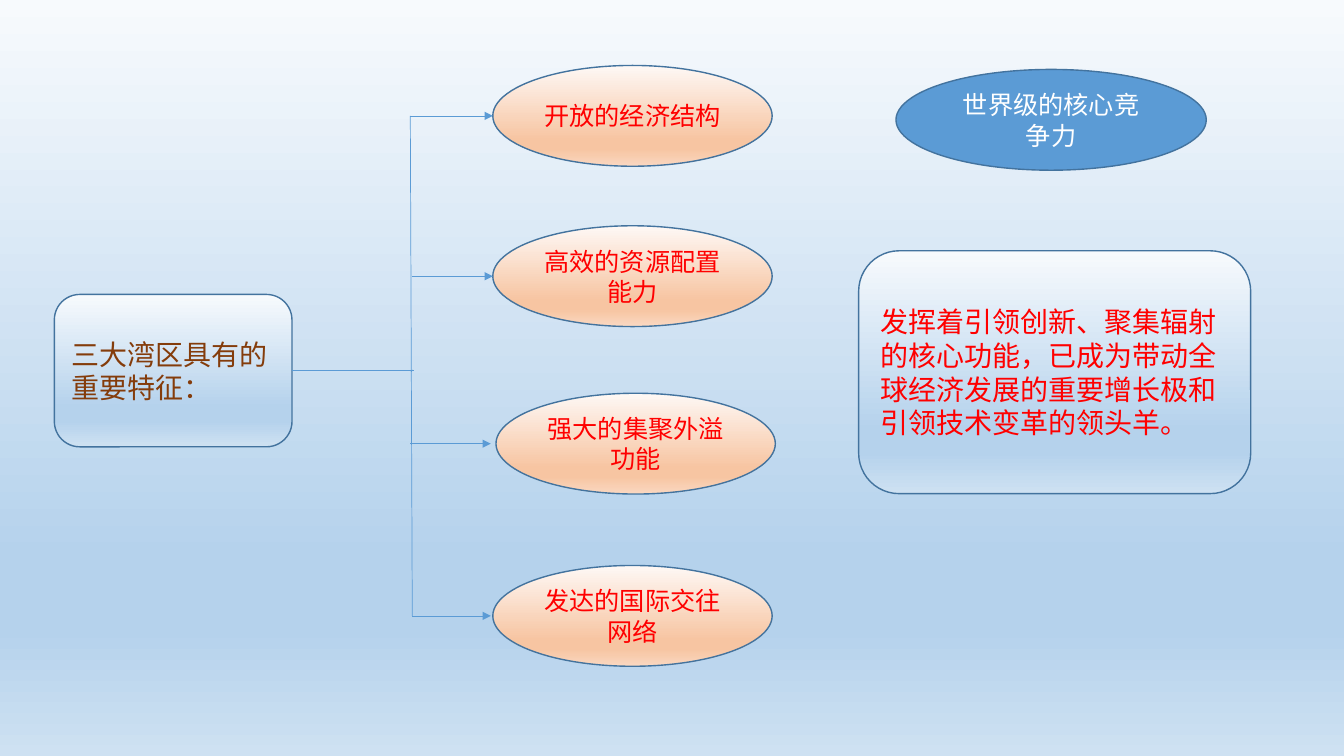
import pptx
import pptx.util
import pptx.dml.color
import pptx.enum.shapes
import pptx.enum.text
import pptx.oxml
import pptx.oxml.ns
from pptx.util import Cm

MSO = pptx.enum.shapes.MSO_SHAPE
ALIGN = pptx.enum.text.PP_ALIGN
qn = pptx.oxml.ns.qn

BLUE_STOPS = [(0, "F7FAFD"), (74, "B5D2EC"), (83, "B5D2EC"), (100, "CEE1F2")]
ORANGE_STOPS = [(0, "FEF8F5"), (74, "F7C5A2"), (83, "F7C5A2"), (100, "FAD8C1")]
NS = pptx.oxml.ns.nsdecls("a")


def rgb(value):
    return pptx.dml.color.RGBColor.from_string(value)


def paint(fill, element, colour):
    """Fill with one hex colour, or top to bottom with (percent, hex) stops."""
    if isinstance(colour, str):
        fill.solid()
        fill.fore_color.rgb = rgb(colour)
        return
    fill.gradient()
    fill.gradient_angle = 270
    stops = next(element.iter(qn("a:gsLst")))
    for gs in list(stops):
        stops.remove(gs)
    for percent, value in colour:
        stops.append(pptx.oxml.parse_xml(
            f'<a:gs {NS} pos="{percent * 1000}"><a:srgbClr val="{value}"/></a:gs>'))


prs = pptx.Presentation()
prs.slide_width, prs.slide_height = Cm(33.87), Cm(19.05)
slide = prs.slides.add_slide(prs.slide_layouts[6])
paint(slide.background.fill, slide.element, BLUE_STOPS)

# Boxes and ovals: preset, left, top, width, height, fill, size, colour, alignment, text
OVAL_W, OVAL_H = 7.04, 2.54
features = [
    (12.42, 1.65, "开放的经济结构"),
    (12.42, 5.69, "高效的资源配置能力"),
    (12.5, 9.91, "强大的集聚外溢功能"),
    (12.42, 14.25, "发达的国际交往网络"),
]
shapes = [
    (MSO.ROUNDED_RECTANGLE, 1.37, 7.42, 5.99, 3.84, BLUE_STOPS, 20, "843C0B",
     ALIGN.LEFT, "三大湾区具有的重要特征："),
    (MSO.OVAL, 22.58, 1.75, 7.82, OVAL_H, "5B9BD5", 18, "FFFFFF",
     ALIGN.CENTER, "世界级的核心竞争力"),
    (MSO.ROUNDED_RECTANGLE, 21.64, 6.32, 9.88, 6.12, BLUE_STOPS, 20, "FF0000",
     ALIGN.LEFT, "发挥着引领创新、聚集辐射的核心功能，已成为带动全球经济发展的"
                 "重要增长极和引领技术变革的领头羊。"),
]
for left, top, text in features:
    shapes.append((MSO.OVAL, left, top, OVAL_W, OVAL_H, ORANGE_STOPS, 18, "FF0000",
                   ALIGN.CENTER, text))

drawn = []
for preset, left, top, width, height, fill, size, colour, align, text in shapes:
    sp = slide.shapes.add_shape(preset, Cm(left), Cm(top), Cm(width), Cm(height))
    sp.shadow.inherit = False
    paint(sp.fill, sp.element, fill)
    sp.line.color.rgb = rgb("43739E")
    sp.line.width = pptx.util.Pt(1)
    tf = sp.text_frame
    tf.word_wrap = True
    tf.vertical_anchor = pptx.enum.text.MSO_ANCHOR.MIDDLE
    p = tf.paragraphs[0]
    p.alignment = align
    r = p.add_run()
    r.text = text
    for name, value in {"name": "Calibri", "size": pptx.util.Pt(size)}.items():
        setattr(r.font, name, value)
    r.font.color.rgb = rgb(colour)
    drawn.append(sp)
topic = drawn[0]

# Lines: x1, y1, x2, y2, arrowhead
lines = [
    (7.44, 9.34, 10.44, 9.34, False),
    (10.39, 9.32, 10.36, 9.37, False),
    (10.34, 2.92, 10.39, 15.52, False),
]
branch_ends = [(10.34, 12.42), (10.39, 12.42), (10.34, 12.37), (10.39, 12.37)]
for (start, end), (_, top, _) in zip(branch_ends, features):
    middle = top + OVAL_H / 2
    lines.append((start, middle, end, middle, True))

connectors = []
for x1, y1, x2, y2, arrow in lines:
    cx = slide.shapes.add_connector(pptx.enum.shapes.MSO_CONNECTOR.STRAIGHT,
                                    Cm(x1), Cm(y1), Cm(x2), Cm(y2))
    cx.line.color.rgb = rgb("5B9BD5")
    cx.line.width = pptx.util.Pt(0.5)
    if arrow:
        cx.line._get_or_add_ln().append(
            pptx.oxml.parse_xml(f'<a:tailEnd {NS} type="triangle"/>'))
    cx.element.spPr.append(pptx.oxml.parse_xml(f"<a:effectLst {NS}/>"))
    connectors.append(cx)
connectors[0].begin_connect(topic, 3)

prs.save("out.pptx")
